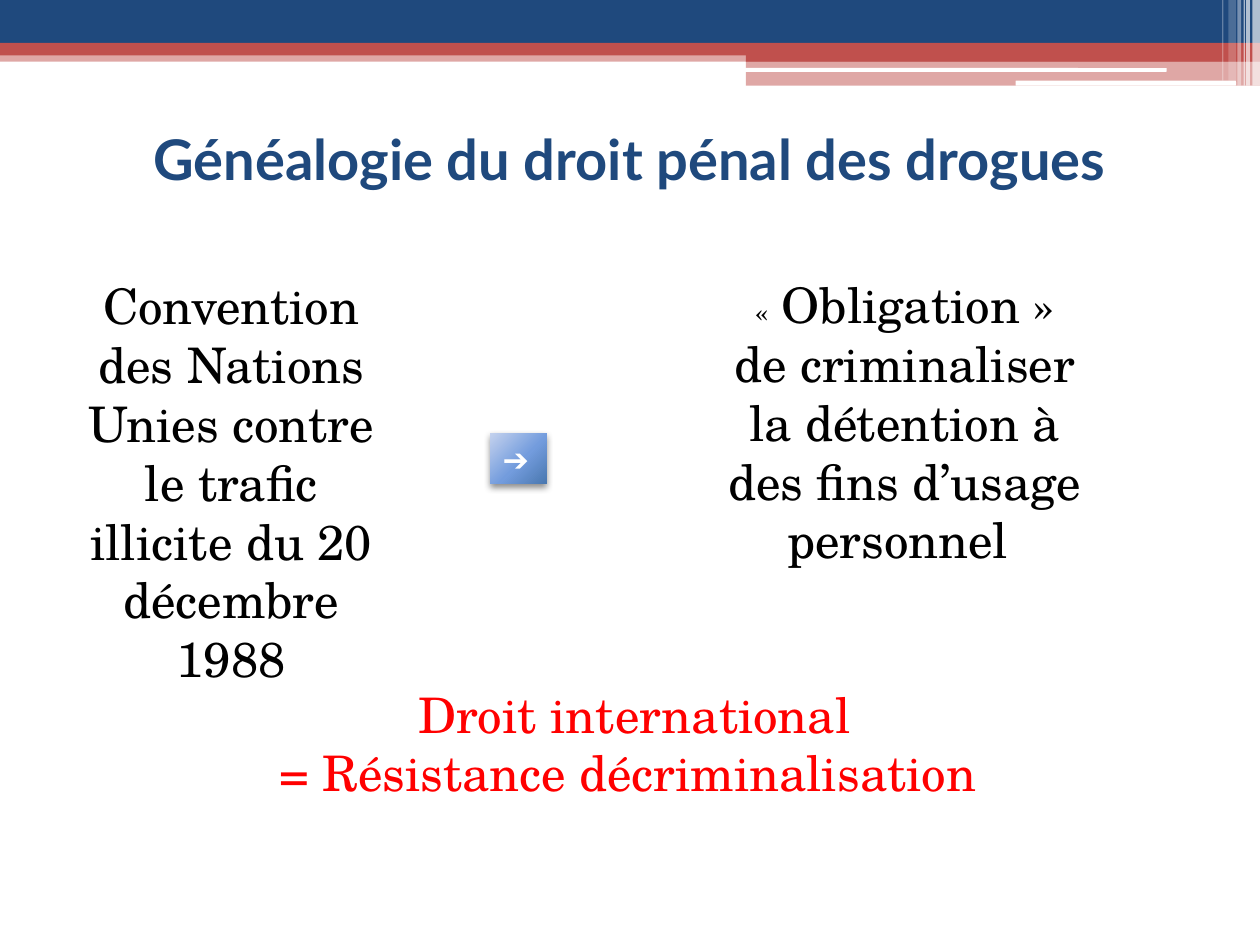
"""Build the slide on the genealogy of criminal drug law."""
from lxml import etree
from pptx import Presentation
from pptx.dml.color import RGBColor
from pptx.enum.shapes import MSO_SHAPE
from pptx.enum.text import MSO_ANCHOR, MSO_AUTO_SIZE, PP_ALIGN
from pptx.oxml import parse_xml
from pptx.oxml.ns import nsdecls, qn
from pptx.util import Inches, Pt

RECT, ROUNDED = MSO_SHAPE.RECTANGLE, MSO_SHAPE.ROUNDED_RECTANGLE
LEFT, CENTER = PP_ALIGN.LEFT, PP_ALIGN.CENTER
MIDDLE = MSO_ANCHOR.MIDDLE
GROW = MSO_AUTO_SIZE.SHAPE_TO_FIT_TEXT

COLORS = {"navy": "1F497D", "red": "C0504D", "white": "FFFFFF",
          "black": "000000", "accent": "FF0000"}
BODY_FONT = "TeX Gyre Schola"

BANDS = [
    (RECT, 0, 0.4, 10, 0.09, "red", 50),
    (RECT, 0, 0, 10, 0.34, "navy", 100),
    (RECT, 0, 0.34, 10, 0.1, "red", 100),
    (RECT, 5.92, 0.39, 4.08, 0.1, "red", 100),
    (RECT, 5.92, 0.48, 4.08, 0.2, "red", 50),
    (ROUNDED, 5.91, 0.54, 3.35, 0.03, "white", 100),
    (ROUNDED, 8.06, 0.64, 1.75, 0.04, "white", 100),
]
STRIPES = [(9.94, 0.06, 0.68, 65), (9.89, 0.03, 0.68, 65), (9.87, 0.01, 0.68, 60),
           (9.82, 0.03, 0.68, 40), (9.75, 0.06, 0.64, 20), (9.7, 0.01, 0.64, 30)]

COLUMNS = [0.43, 3.06, 3.52, 2.49]
ROWS = [0.4, 0.4, 2.87, 1.75]
MERGES = [((0, 0), (0, 3)), ((1, 1), (1, 3))] + [((2, c), (3, c)) for c in (1, 2, 3)]

GRADIENT = [(0, "C4D2EE"), (55, "739CDD"), (100, "4A78B0")]


def rgb(name):
    """Return the named colour."""
    return RGBColor.from_string(COLORS[name])


def box(left, top, width, height):
    """Convert a position and size in inches to lengths."""
    return [Inches(v) for v in (left, top, width, height)]


def format_run(r, size, color, font=BODY_FONT, bold=None):
    """Set the font of a run."""
    r.font.name, r.font.size, r.font.bold = font, Pt(size), bold
    r.font.color.rgb = rgb(color)


def add_band(slide, kind, left, top, width, height, color, opacity):
    """Add a plain bar with the given opacity in percent."""
    sp = slide.shapes.add_shape(kind, *box(left, top, width, height))
    sp.shadow.inherit = False
    sp.line.fill.background()
    sp.fill.solid()
    sp.fill.fore_color.rgb = rgb(color)
    if opacity < 100:
        clr = sp.fill._xPr.find(qn("a:solidFill"))[0]
        etree.SubElement(clr, qn("a:alpha"), val=str(opacity * 1000))


def format_cell(cell, row):
    """Give a cell a white fill and white borders."""
    cell.fill.solid()
    cell.fill.fore_color.rgb = rgb("white")
    tc_pr = cell._tc.get_or_add_tcPr()
    for i, side in enumerate("LRTB"):
        width = Pt(3 if row == 0 and side == "B" else 1)
        tc_pr.insert(i, parse_xml(
            f'<a:ln{side} {nsdecls("a")} w="{width}"><a:solidFill>'
            f'<a:srgbClr val="{COLORS["white"]}"/></a:solidFill></a:ln{side}>'))


def add_grid(slide):
    """Add the white layout table."""
    frame = slide.shapes.add_table(len(ROWS), len(COLUMNS),
                                   *box(0.5, 1.95, sum(COLUMNS), sum(ROWS)))
    table = frame.table
    table.first_row = table.horz_banding = False
    for column, width in zip(table.columns, COLUMNS):
        column.width = Inches(width)
    for i, height in enumerate(ROWS):
        table.rows[i].height = Inches(height)
        for cell in table.rows[i].cells:
            format_cell(cell, i)
    for first, last in MERGES:
        table.cell(*first).merge(table.cell(*last))


def add_arrow_tile(slide):
    """Add the shaded tile that holds the arrow."""
    sp = slide.shapes.add_shape(RECT, *box(3.89, 3.44, 0.45, 0.4))
    sp.line.fill.background()
    stops = "".join(f'<a:gs pos="{pos * 1000}"><a:srgbClr val="{color}"/></a:gs>'
                    for pos, color in GRADIENT)
    sp_pr = sp.fill._xPr
    sp_pr.insert(2, parse_xml(
        f'<a:gradFill {nsdecls("a")}><a:gsLst>{stops}</a:gsLst><a:path path="circle">'
        '<a:fillToRect l="-40000" t="-90000" r="140000" b="190000"/></a:path></a:gradFill>'))
    sp_pr.append(parse_xml(
        f'<a:effectLst {nsdecls("a")}><a:outerShdw blurRad="{Pt(4)}" dist="{Pt(2)}" '
        f'dir="5400000" rotWithShape="0"><a:srgbClr val="{COLORS["black"]}">'
        '<a:alpha val="45000"/></a:srgbClr></a:outerShdw></a:effectLst>'))
    tf = sp.text_frame
    tf.text = "➔"
    tf.auto_size = GROW
    tf.vertical_anchor = MSO_ANCHOR.TOP
    p = tf.paragraphs[0]
    p.alignment = LEFT
    format_run(p.runs[0], 18, "white", "Arial")


def add_text(slide, position, paragraphs, color="black"):
    """Add centred text, each paragraph a list of (text, size) runs."""
    tf = slide.shapes.add_textbox(*box(*position)).text_frame
    tf.word_wrap = True
    tf.auto_size = GROW
    for i, runs in enumerate(paragraphs):
        p = tf.add_paragraph() if i else tf.paragraphs[0]
        p.alignment = CENTER
        for text, size in runs:
            r = p.add_run()
            r.text = text
            format_run(r, size, color)


def set_title(slide, text):
    """Place and format the title."""
    title = slide.shapes.title
    title.left, title.top, title.width, title.height = box(0.5, 0.67, 9, 1.17)
    tf = title.text_frame
    tf.text = text
    tf.vertical_anchor = MIDDLE
    p = tf.paragraphs[0]
    p.alignment = CENTER
    format_run(p.runs[0], 32, "navy", "Lato", True)


def main():
    """Build and save the slide."""
    prs = Presentation()
    prs.slide_width, prs.slide_height = Inches(10), Inches(7.5)
    slide = prs.slides.add_slide(prs.slide_layouts[5])
    for band in BANDS:
        add_band(slide, *band)
    for left, width, height, opacity in STRIPES:
        add_band(slide, RECT, left, 0, width, height, "white", opacity)
    add_grid(slide)
    add_arrow_tile(slide)
    set_title(slide, "Généalogie du droit pénal des drogues")
    add_text(slide, (0.57, 2.14, 2.53, 3.4), [[
        ("Convention des Nations Unies contre le trafic illicite du 20 décembre 1988", 28)]])
    add_text(slide, (5.66, 2.13, 3.04, 2.46), [[
        ("«", 18),
        (" Obligation » de criminaliser la détention à des fins d’usage personnel ", 28)]])
    add_text(slide, (0.57, 5.38, 8.93, 1.04), [
        [("Droit international", 28)], [("= Résistance décriminalisation ", 28)]], "accent")
    prs.save("out.pptx")


if __name__ == "__main__":
    main()
